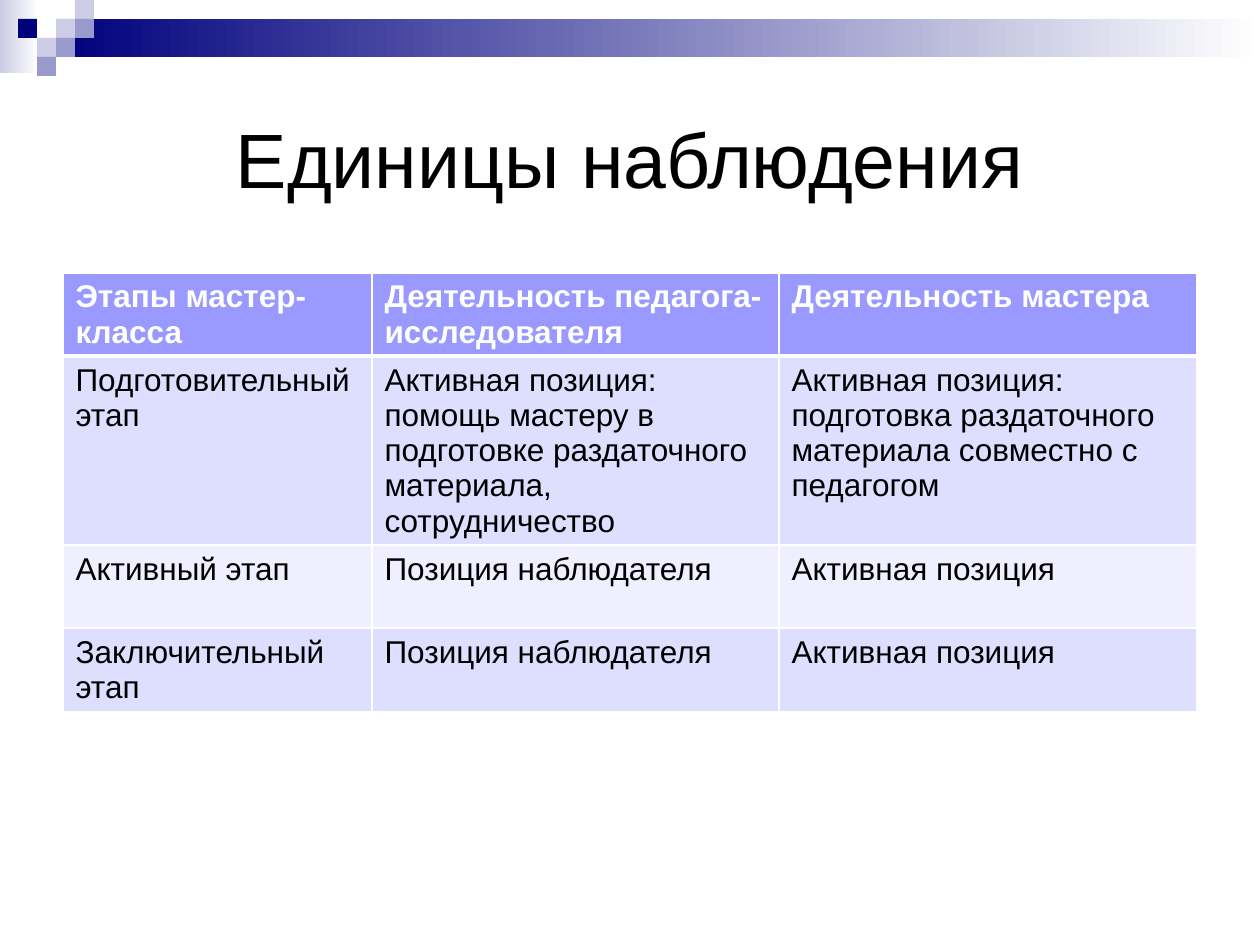
from dataclasses import dataclass

from lxml import etree
from pptx import Presentation
from pptx.dml.color import RGBColor
from pptx.enum import shapes, text
from pptx.oxml import ns
from pptx.util import Emu, Pt

SCALE = 914400 / 126


@dataclass(frozen=True)
class Theme:
    font: str = "Arial"
    title_size: int = 44
    table_size: int = 18
    white: str = "FFFFFF"
    black: str = "000000"
    navy: str = "00007D"
    violet: str = "9999CC"
    pale: str = "CCCCE6"
    header: str = "9999FF"
    band_dark: str = "DEDEFF"
    band_light: str = "EFEFFF"


THEME = Theme()

HEADINGS = [
    "Этапы мастер-класса",
    "Деятельность педагога-исследователя",
    "Деятельность мастера",
]
STAGES = [
    [
        "Подготовительный этап",
        "Активная позиция:\nпомощь мастеру в подготовке раздаточного материала, сотрудничество",
        "Активная позиция:\nподготовка раздаточного материала совместно с педагогом",
    ],
    ["Активный этап", "Позиция наблюдателя", "Активная позиция"],
    ["Заключительный этап", "Позиция наблюдателя", "Активная позиция"],
]


def px(length):
    return Emu(round(length * SCALE))


def rgb(value):
    return RGBColor.from_string(value)


def add_span(para, words, size, color, bold=False):
    span = para.add_run()
    span.text = words
    span.font.name = THEME.font
    span.font.size = Pt(size)
    span.font.bold = bold
    span.font.color.rgb = rgb(color)


def add_block(page, box, *colors):
    block = page.shapes.add_shape(shapes.MSO_SHAPE.RECTANGLE, *map(px, box))
    block.shadow.inherit = False
    block.line.fill.background()
    if len(colors) == 1:
        block.fill.solid()
        block.fill.fore_color.rgb = rgb(colors[0])
        return
    block.fill.gradient()
    block.fill.gradient_angle = 0
    for stop, color in zip(block.fill.gradient_stops, colors):
        stop.color.rgb = rgb(color)


def add_banner(page, box):
    left, top, width, height = box
    unit = height // 4
    add_block(page, (left, top, 39, height - 3), THEME.pale, THEME.white)
    add_block(page, (left + 3 * unit, top + unit, width - 3 * unit, 2 * unit),
              THEME.navy, THEME.white)
    squares = [
        (3, 1, THEME.pale),
        (4, 0, THEME.pale),
        (4, 1, THEME.violet),
        (2, 2, THEME.pale),
        (1, 1, THEME.navy),
        (3, 2, THEME.violet),
        (2, 3, THEME.violet),
    ]
    for column, row, color in squares:
        add_block(page, (left + column * unit - 1, top + row * unit, unit, unit), color)


def add_title(page, box):
    title = page.shapes.title
    title.left, title.top, title.width, title.height = map(px, box)
    frame = title.text_frame
    frame.word_wrap = True
    frame.vertical_anchor = text.MSO_ANCHOR.MIDDLE
    para = frame.paragraphs[0]
    para.alignment = text.PP_ALIGN.CENTER
    add_span(para, "Единицы наблюдения", THEME.title_size, THEME.black)


def add_border(cell, side, points):
    properties = cell._tc.get_or_add_tcPr()
    line = etree.SubElement(properties, ns.qn(f"a:ln{side}"), w=str(Pt(points)))
    fill = etree.SubElement(line, ns.qn("a:solidFill"))
    etree.SubElement(fill, ns.qn("a:srgbClr"), val=THEME.white)


def fill_cell(cell, words, fill, color, bold, top, bottom):
    for side, points in (("L", 1), ("R", 1), ("T", top), ("B", bottom)):
        add_border(cell, side, points)
    cell.fill.solid()
    cell.fill.fore_color.rgb = rgb(fill)
    frame = cell.text_frame
    for index, line in enumerate(words.split("\n")):
        para = frame.add_paragraph() if index else frame.paragraphs[0]
        add_span(para, line, THEME.table_size, color, bold)


def add_stage_table(page, box):
    rows = [HEADINGS, *STAGES]
    widths = [309, 407, box[2] - 309 - 407]
    heights = [83, 189, 83, 83]
    table = page.shapes.add_table(len(rows), len(widths), *map(px, box)).table
    for column, width in zip(table.columns, widths):
        column.width = px(width)
    for index, (row, height, entries) in enumerate(zip(table.rows, heights, rows)):
        row.height = px(height)
        header = index == 0
        band = THEME.band_dark if index % 2 else THEME.band_light
        for cell, words in zip(row.cells, entries):
            fill_cell(
                cell, words,
                fill=THEME.header if header else band,
                color=THEME.white if header else THEME.black,
                bold=header,
                top=3 if index == 1 else 1,
                bottom=3 if header else 1,
            )


def main():
    deck = Presentation()
    deck.slide_width, deck.slide_height = px(1260), px(945)
    page = deck.slides.add_slide(deck.slide_layouts[5])
    add_banner(page, (0, 0, 1260, 76))
    add_title(page, (63, 63, 1134, 189))
    add_stage_table(page, (63, 273, 1134, 438))
    deck.save("out.pptx")


if __name__ == "__main__":
    main()
